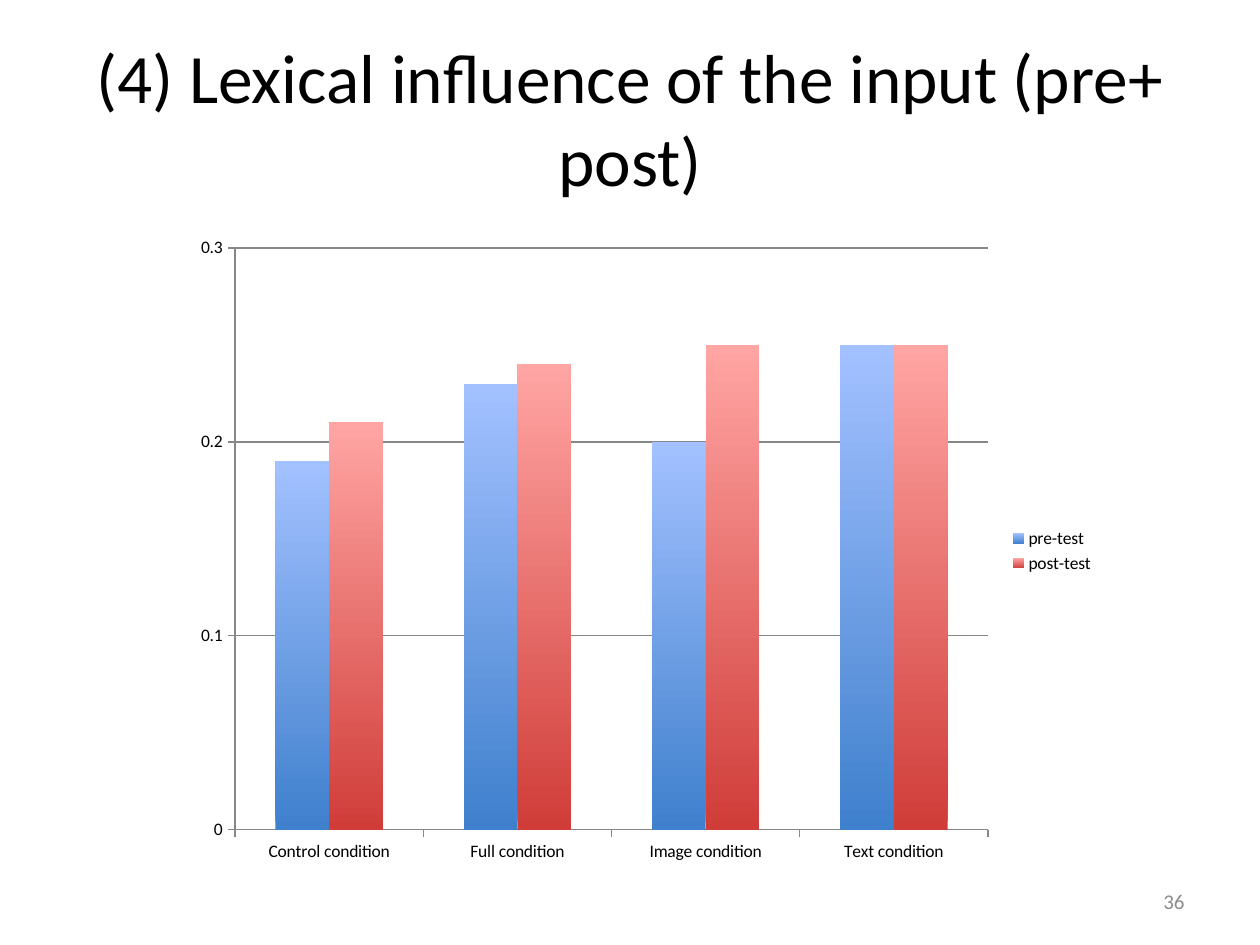
import pptx
import pptx.util
import pptx.chart.data
import pptx.dml.color
import pptx.enum.chart
import pptx.enum.text
import lxml.etree

PX = 914400 / 126
FONT = "Calibri"
COLORS = {"text": "000000", "number": "8C8C8C", "axis": "878787"}
CATEGORIES = ["Control condition", "Full condition", "Image condition", "Text condition"]
# name, values, bottom colour, top colour
SERIES = [
    ("pre-test", (0.19, 0.23, 0.2, 0.25), "3F80CD", "A3C1FF"),
    ("post-test", (0.21, 0.24, 0.25, 0.25), "D03D39", "FFA5A3"),
]


def px(*lengths):
    return [pptx.util.Emu(round(n * PX)) for n in lengths]


def rgb(value):
    return pptx.dml.color.RGBColor.from_string(value)


def style_font(font, size, color):
    font.name = FONT
    font.size = pptx.util.Pt(size)
    font.color.rgb = rgb(color)


def write_line(shape, text, size, color, align):
    tf = shape.text_frame
    tf.text = text
    tf.word_wrap = True
    tf.vertical_anchor = pptx.enum.text.MSO_ANCHOR.MIDDLE
    p = tf.paragraphs[0]
    p.alignment = align
    style_font(p.runs[0].font, size, color)


def add_title(s, box):
    title = s.shapes.title
    title.left, title.top, title.width, title.height = px(*box)
    write_line(title, "(4) Lexical influence of the input (pre+ post)", 39.6,
               COLORS["text"], pptx.enum.text.PP_ALIGN.CENTER)


def add_slide_number(s, box):
    write_line(s.shapes.add_textbox(*px(*box)), "36", 12,
               COLORS["number"], pptx.enum.text.PP_ALIGN.RIGHT)


def set_plot_area(chart, box, plot):
    """Fix the inner plot area; plot is in px relative to the chart box."""
    area = chart.plots[0]._element.getparent()
    ns = lxml.etree.QName(area).namespace
    tag = "{%s}" % ns
    for old in area.findall(tag + "layout"):
        area.remove(old)
    layout = lxml.etree.Element(tag + "layout")
    manual = lxml.etree.SubElement(layout, tag + "manualLayout")
    left, top, width, height = plot
    settings = [("layoutTarget", "inner"), ("xMode", "edge"), ("yMode", "edge"),
                ("x", left / box[2]), ("y", top / box[3]),
                ("w", width / box[2]), ("h", height / box[3])]
    for name, value in settings:
        lxml.etree.SubElement(manual, tag + name).set("val", str(value))
    area.insert(0, layout)


def add_condition_chart(s, box):
    data = pptx.chart.data.CategoryChartData()
    data.categories = CATEGORIES
    for name, values, *_ in SERIES:
        data.add_series(name, values)
    kind = pptx.enum.chart.XL_CHART_TYPE.COLUMN_CLUSTERED
    chart = s.shapes.add_chart(kind, *px(*box), data).chart
    chart.has_title = False
    style_font(chart.font, 10, COLORS["text"])
    set_plot_area(chart, box, (52, 22, 753, 582))

    # Columns
    plot = chart.plots[0]
    plot.gap_width = 150
    plot.overlap = 0
    plot.vary_by_categories = False
    for series, (_, _, *ends) in zip(plot.series, SERIES):
        fill = series.format.fill
        fill.gradient()
        fill.gradient_angle = 90
        for stop, color in zip(fill.gradient_stops, ends):
            stop.color.rgb = rgb(color)
        series.format.line.fill.background()

    # Axes
    value_axis = chart.value_axis
    value_axis.minimum_scale = 0
    value_axis.maximum_scale = 0.3
    value_axis.major_unit = 0.1
    value_axis.has_major_gridlines = True
    value_axis.tick_labels.number_format = "General"
    value_axis.tick_labels.number_format_is_linked = False
    for axis in (value_axis, chart.category_axis):
        axis.major_tick_mark = pptx.enum.chart.XL_TICK_MARK.OUTSIDE
    for part in (value_axis, chart.category_axis, value_axis.major_gridlines):
        part.format.line.color.rgb = rgb(COLORS["axis"])
        part.format.line.width = pptx.util.Pt(0.75)

    # Legend
    chart.has_legend = True
    chart.legend.position = pptx.enum.chart.XL_LEGEND_POSITION.RIGHT
    chart.legend.include_in_layout = False


def main():
    prs = pptx.Presentation()
    prs.slide_width, prs.slide_height = px(1260, 945)
    s = prs.slides.add_slide(prs.slide_layouts[5])
    add_title(s, (63, 38, 1134, 158))
    add_slide_number(s, (903, 876, 294, 50))
    add_condition_chart(s, (183, 226, 924, 650))
    prs.save("out.pptx")


if __name__ == "__main__":
    main()
